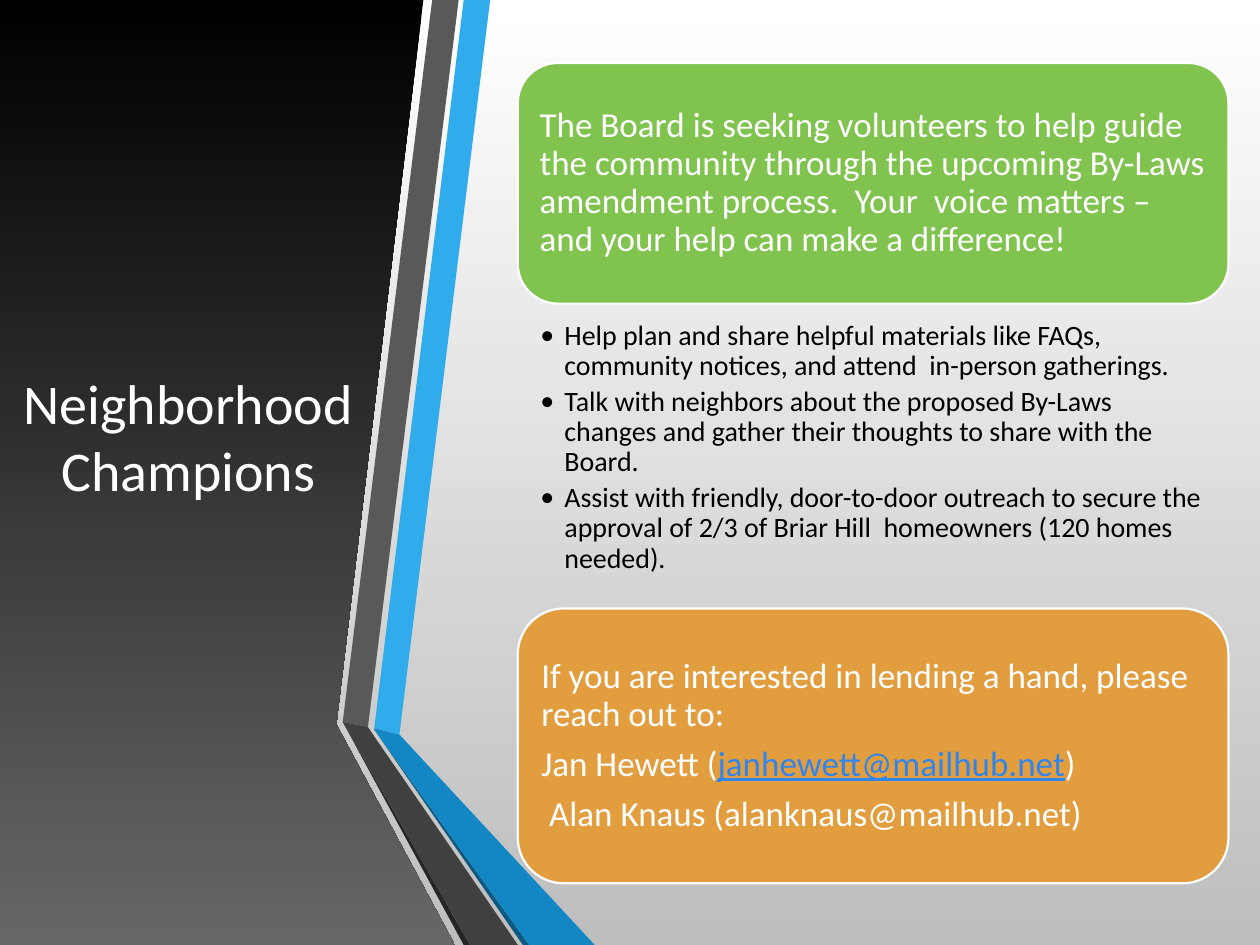
from dataclasses import dataclass

from lxml import etree
from pptx import Presentation
from pptx.dml.color import RGBColor
from pptx.dml.fill import FillFormat
from pptx.enum.shapes import MSO_SHAPE
from pptx.enum.text import MSO_ANCHOR, PP_ALIGN
from pptx.oxml.ns import qn
from pptx.shapes.autoshape import Shape
from pptx.slide import Slide
from pptx.text.text import TextFrame, _Paragraph
from pptx.util import Inches, Pt


@dataclass(frozen=True)
class Theme:
    font: str = "Calibri"
    title_size: int = 32
    card_size: int = 20
    bullet_size: int = 16
    white: str = "FFFFFF"
    black: str = "000000"
    silver: str = "BEBEBE"
    panel_gray: str = "676767"
    band_gray: str = "595959"
    fold_gray: str = "404040"
    edge_gray: str = "262626"
    band_blue: str = "30ACEC"
    fold_blue: str = "1287C3"
    edge_blue: str = "0C5A82"
    green: str = "80C34F"
    orange: str = "E29D3E"
    link: str = "3085ED"


@dataclass(frozen=True)
class Ribbon:
    color: str
    points: tuple[tuple[float, float], ...]


@dataclass(frozen=True)
class Card:
    top: float
    height: float
    color: str
    paragraphs: tuple[tuple[str, ...], ...]


THEME = Theme()
WIDTH, HEIGHT = 10, 7.5
CONTENT_LEFT, CONTENT_WIDTH = 4.11, 5.64
UNITS_PER_INCH = 100

PANEL = ((2.64, 0), (3.36, 0), (2.67, 5.75), (3.61, 7.5), (0, 7.5), (0, 0))

RIBBONS = (
    Ribbon(THEME.band_blue, ((2.97, 5.78), (3.17, 5.83), (3.89, 0), (3.68, 0))),
    Ribbon(THEME.band_gray, ((3.64, 0), (3.43, 0), (2.72, 5.73), (2.92, 5.77))),
    Ribbon(THEME.edge_gray, ((2.72, 5.73), (3.68, 7.5), (3.73, 7.5))),
    Ribbon(THEME.edge_blue, ((2.97, 5.79), (4.15, 7.5), (4.2, 7.5))),
    Ribbon(THEME.fold_blue, ((2.97, 5.78), (2.97, 5.79), (4.2, 7.5), (4.72, 7.5), (3.17, 5.83))),
    Ribbon(THEME.fold_gray, ((4.11, 7.5), (2.96, 5.83), (2.92, 5.77), (2.72, 5.73), (3.73, 7.5))),
)

CARDS = (
    Card(0.5, 1.91, THEME.green, (
        ("The Board is seeking volunteers to help guide the community through "
         "the upcoming By-Laws amendment process.  Your  voice matters – and "
         "your help can make a difference!",),
    )),
    Card(4.83, 2.18, THEME.orange, (
        ("If you are interested in lending a hand, please reach out to:",),
        ("Jan Hewett (", "janhewett@mailhub.net", ")"),
        (" Alan Knaus (alanknaus@mailhub.net)",),
    )),
)

BULLETS = (
    "Help plan and share helpful materials like FAQs, community notices, "
    "and attend  in-person gatherings.",
    "Talk with neighbors about the proposed By-Laws changes and gather their "
    "thoughts to share with the Board.",
    "Assist with friendly, door-to-door outreach to secure the approval of "
    "2/3 of Briar Hill  homeowners (120 homes needed).",
)


def fill_gradient(fill: FillFormat, top: str, bottom: str) -> None:
    fill.gradient()
    fill.gradient_angle = 270
    for stop, color in zip(fill.gradient_stops, (top, bottom)):
        stop.color.rgb = RGBColor.from_string(color)


def fill_solid(fill: FillFormat, color: str) -> None:
    fill.solid()
    fill.fore_color.rgb = RGBColor.from_string(color)


def add_polygon(s: Slide, points: tuple[tuple[float, float], ...]) -> Shape:
    start, *rest = [(x * UNITS_PER_INCH, y * UNITS_PER_INCH) for x, y in points]
    builder = s.shapes.build_freeform(*start, scale=Inches(1) / UNITS_PER_INCH)
    builder.add_line_segments(rest, close=True)
    sp = builder.convert_to_shape()
    sp.shadow.inherit = False
    sp.line.fill.background()
    return sp


def set_insets(tf: TextFrame, sides: float, ends: float) -> None:
    tf.word_wrap = True
    tf.margin_left = tf.margin_right = Inches(sides)
    tf.margin_top = tf.margin_bottom = Inches(ends)


def style_runs(p: _Paragraph, size: int, color: str) -> None:
    for r in p.runs:
        r.font.name = THEME.font
        r.font.size = Pt(size)
        r.font.color.rgb = RGBColor.from_string(color)


def add_backdrop(s: Slide) -> None:
    fill_gradient(s.background.fill, THEME.white, THEME.silver)
    sp = s.shapes.add_shape(MSO_SHAPE.RECTANGLE, 0, 0, Inches(WIDTH), Inches(HEIGHT))
    sp.shadow.inherit = False
    sp.line.fill.background()
    fill_gradient(sp.fill, THEME.white, THEME.silver)
    fill_gradient(add_polygon(s, PANEL).fill, THEME.black, THEME.panel_gray)


def add_title(s: Slide, text: str) -> None:
    tf = s.shapes.add_textbox(Inches(0.02), Inches(0.67), Inches(2.95), Inches(5.58)).text_frame
    set_insets(tf, 0.1, 0.05)
    tf.vertical_anchor = MSO_ANCHOR.MIDDLE
    tf.text = text
    p = tf.paragraphs[0]
    p.alignment = PP_ALIGN.CENTER
    style_runs(p, THEME.title_size, THEME.white)


def add_card(s: Slide, card: Card) -> None:
    sp = s.shapes.add_shape(
        MSO_SHAPE.ROUNDED_RECTANGLE, Inches(CONTENT_LEFT), Inches(card.top),
        Inches(CONTENT_WIDTH), Inches(card.height))
    sp.shadow.inherit = False
    fill_solid(sp.fill, card.color)
    fill_solid(sp.line.fill, THEME.white)
    sp.line.width = Pt(1.25)
    tf = sp.text_frame
    set_insets(tf, 0.08, 0.08)
    tf.vertical_anchor = MSO_ANCHOR.MIDDLE
    for i, pieces in enumerate(card.paragraphs):
        p = tf.add_paragraph() if i else tf.paragraphs[0]
        p.alignment = PP_ALIGN.LEFT
        p.line_spacing = 0.9
        p.space_after = Pt(7)
        for piece in pieces:
            p.add_run().text = piece
        style_runs(p, THEME.card_size, THEME.white)
        for r in p.runs[1:2]:
            r.font.underline = True
            r.font.color.rgb = RGBColor.from_string(THEME.link)


def add_bullets(s: Slide, items: tuple[str, ...]) -> None:
    tf = s.shapes.add_textbox(
        Inches(CONTENT_LEFT), Inches(2.52), Inches(CONTENT_WIDTH), Inches(2.18)).text_frame
    set_insets(tf, 0.18, 0.03)
    tf.margin_right = Inches(0.16)
    tf.text = "\n".join(items)
    for p in tf.paragraphs:
        p.line_spacing = 0.9
        p.space_after = Pt(3.2)
        style_runs(p, THEME.bullet_size, THEME.black)
        pPr = p._p.get_or_add_pPr()
        pPr.set("marL", str(Inches(0.19)))
        pPr.set("indent", str(-Inches(0.19)))
        etree.SubElement(pPr, qn("a:buFont")).set("typeface", THEME.font)
        etree.SubElement(pPr, qn("a:buChar")).set("char", "•")


def main() -> None:
    prs = Presentation()
    prs.slide_width, prs.slide_height = Inches(WIDTH), Inches(HEIGHT)
    s = prs.slides.add_slide(prs.slide_layouts[6])
    add_backdrop(s)
    add_title(s, "Neighborhood Champions")
    for ribbon in RIBBONS:
        fill_solid(add_polygon(s, ribbon.points).fill, ribbon.color)
    for card in CARDS:
        add_card(s, card)
    add_bullets(s, BULLETS)
    prs.save("out.pptx")


if __name__ == "__main__":
    main()
